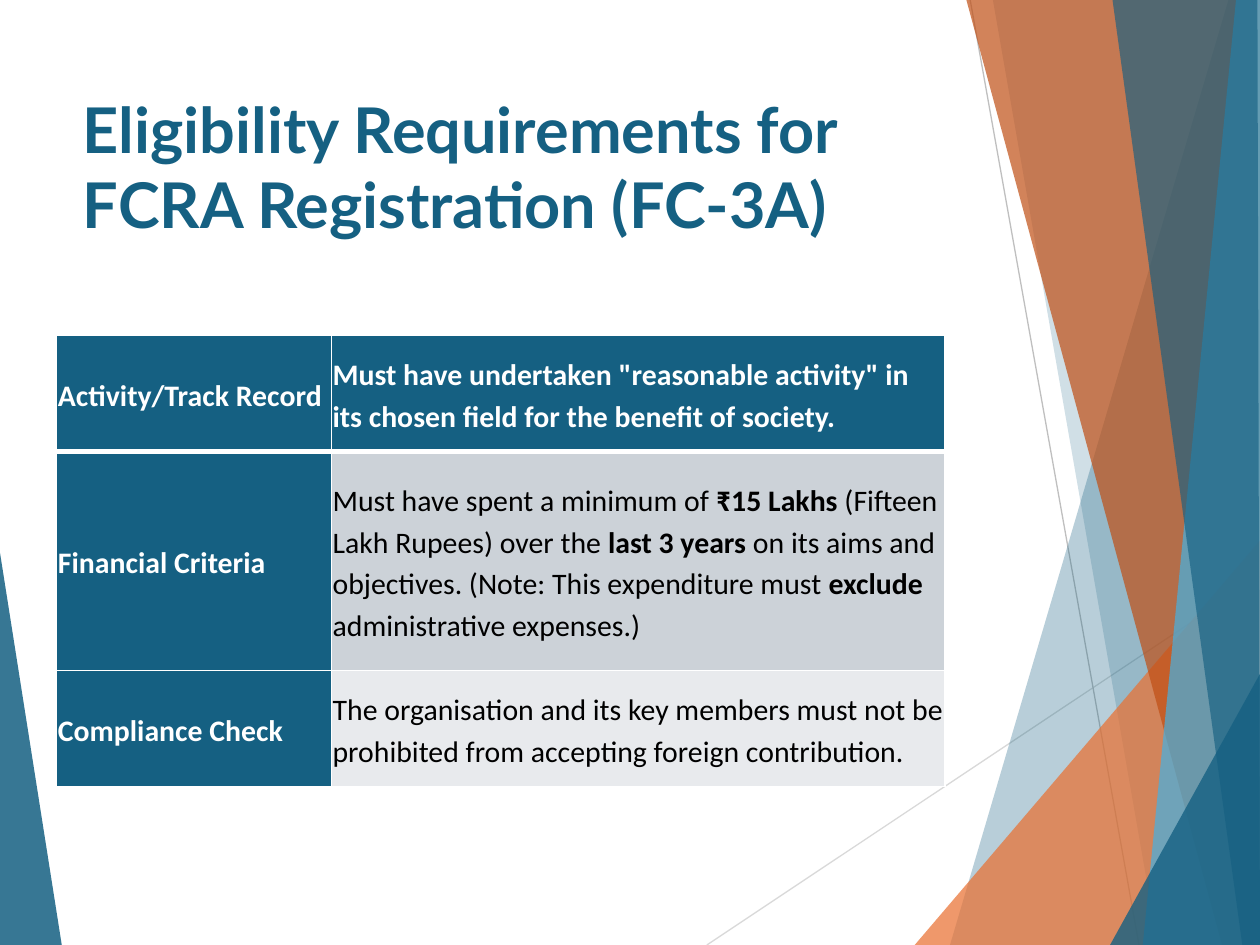
from lxml.etree import SubElement
from pptx import Presentation
from pptx.dml.color import RGBColor
from pptx.enum.shapes import MSO_CONNECTOR
from pptx.enum.text import MSO_ANCHOR
from pptx.oxml import parse_xml
from pptx.oxml.ns import nsdecls, qn
from pptx.util import Inches, Pt

BLUE = RGBColor(0x15, 0x60, 0x82)
SKY = RGBColor(0x46, 0xB1, 0xE1)
ORANGE = RGBColor(0xE9, 0x71, 0x32)
RUST = RGBColor(0xC0, 0x4F, 0x15)
LIGHT_GRAY = RGBColor(0xD9, 0xD9, 0xD9)
GRAY = RGBColor(0xBF, 0xBF, 0xBF)
BAND_DARK = RGBColor(0xCC, 0xD2, 0xD8)
BAND_LIGHT = RGBColor(0xE8, 0xEA, 0xED)
WHITE = RGBColor(0xFF, 0xFF, 0xFF)
BLACK = RGBColor(0, 0, 0)

prs = Presentation()
prs.slide_width, prs.slide_height = Inches(10), Inches(7.5)
s = prs.slides.add_slide(prs.slide_layouts[6])


def x(percent):
    return round(prs.slide_width * percent / 100)


def y(percent):
    return round(prs.slide_height * percent / 100)


for x1, y1, x2, y2, color in [(56.1, 100, 100, 61, LIGHT_GRAY), (77, 0, 90.4, 100, GRAY)]:
    line = s.shapes.add_connector(MSO_CONNECTOR.STRAIGHT, x(x1), y(y1), x(x2), y(y2))
    line.line.color.rgb = color
    line.line.width = Pt(0.75)
    SubElement(line._element.spPr, qn("a:effectLst"))

facets = [
    (BLUE, 85, [(0, 58.5), (4.9, 100), (0, 100)]),
    (BLUE, 30, [(97.5, 0), (75.4, 100), (100, 100), (100, 0)]),
    (BLUE, 20, [(78.8, 0), (91.9, 100), (100, 100), (100, 0)]),
    (ORANGE, 72, [(72.6, 100), (100, 57.2), (100, 100)]),
    (RUST, 70, [(76.7, 0), (97, 100), (100, 100), (100, 0)]),
    (SKY, 70, [(98.1, 0), (90.7, 100), (100, 100), (100, 0)]),
    (BLUE, 65, [(88.3, 0), (98.6, 100), (100, 100), (99.8, 0)]),
    (BLUE, 80, [(88.1, 100), (100, 71.3), (100, 100)]),
]
for color, opacity, corners in facets:
    points = [(x(px), y(py)) for px, py in corners]
    outline = s.shapes.build_freeform(*points[0])
    outline.add_line_segments(points[1:])
    sp = outline.convert_to_shape()
    sp.shadow.inherit = False
    sp.fill.solid()
    sp.fill.fore_color.rgb = color
    sp.line.fill.background()
    clr = sp._element.spPr.find(qn("a:solidFill")).find(qn("a:srgbClr"))
    SubElement(clr, qn("a:alpha"), val=str(opacity * 1000))

title = s.shapes.add_textbox(x(5.6), y(8.9), x(70.5), y(19.2))
tf = title.text_frame
tf.word_wrap = True
tf.vertical_anchor = MSO_ANCHOR.TOP
r = tf.paragraphs[0].add_run()
r.text = "Eligibility Requirements for FCRA Registration (FC-3A)"
r.font.name = "Lato"
r.font.size = Pt(36)
r.font.bold = True
r.font.color.rgb = BLUE

criteria = [
    ("Activity/Track Record", BLUE, WHITE, 12.27, [
        ('Must have undertaken "reasonable activity" in its chosen field for the benefit of society.', True),
    ]),
    ("Financial Criteria", BAND_DARK, BLACK, 23.2, [
        ("Must have spent a minimum of ", False),
        ("₹15 Lakhs", True),
        (" (Fifteen Lakh Rupees) over the ", False),
        ("last 3 years ", True),
        ("on its aims and objectives. (Note: This expenditure must ", False),
        ("exclude ", True),
        ("administrative expenses.)", False),
    ]),
    ("Compliance Check", BAND_LIGHT, BLACK, 12.27, [
        ("The organisation and its key members must not be prohibited from accepting foreign contribution.", False),
    ]),
]
table = s.shapes.add_table(len(criteria), 2, x(4.5), y(35.5), x(70.5), y(47.74)).table
table.horz_banding = False
for column, width in zip(table.columns, (21.8, 48.7)):
    column.width = x(width)

for i, (heading, band, ink, height, requirement) in enumerate(criteria):
    table.rows[i].height = y(height)
    contents = [([(heading, True)], BLUE, WHITE), (requirement, band, ink)]
    for j, (runs, fill, color) in enumerate(contents):
        cell = table.cell(i, j)
        cell.fill.solid()
        cell.fill.fore_color.rgb = fill
        cell.vertical_anchor = MSO_ANCHOR.MIDDLE
        cell.margin_left = cell.margin_right = Inches(0.01)
        cell.margin_top = cell.margin_bottom = Inches(0.01)
        p = cell.text_frame.paragraphs[0]
        p.line_spacing = 1.15
        p.space_after = Pt(8)
        for text, bold in runs:
            r = p.add_run()
            r.text = text
            r.font.name = "Calibri"
            r.font.size = Pt(17)
            r.font.bold = bold
            r.font.color.rgb = color
        widths = {"L": 1, "R": 1, "T": 3 if i == 1 else 1, "B": 3 if i == 0 else 1}
        for k, (side, width) in enumerate(widths.items()):
            border = parse_xml(
                f'<a:ln{side} {nsdecls("a")} w="{Pt(width)}"><a:solidFill>'
                f'<a:srgbClr val="{WHITE}"/></a:solidFill></a:ln{side}>')
            cell._tc.get_or_add_tcPr().insert(k, border)

prs.save("out.pptx")
